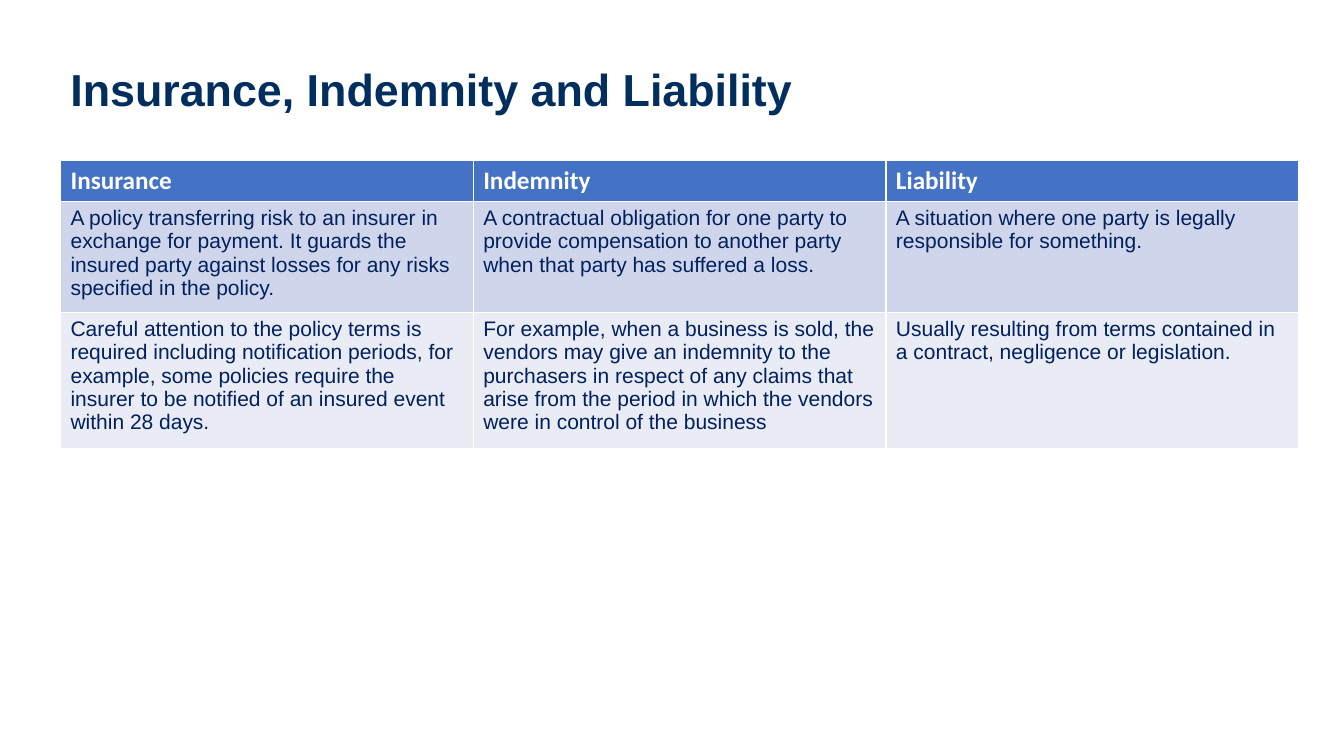
import pptx
import pptx.dml.color
import pptx.enum.text
import pptx.util
from pptx.util import Inches

COLORS = {
    "title": "002E5F",
    "head": "4472C4",
    "white": "FFFFFF",
    "body": "002060",
    "dark": "CFD5EA",
    "light": "E9EBF5",
}

ROWS = [
    ["Insurance", "Indemnity", "Liability"],
    [
        "A policy transferring risk to an insurer in exchange for payment. It guards the insured party against losses for any risks specified in the policy.",
        "A contractual obligation for one party to provide compensation to another party when that party has suffered a loss.",
        "A situation where one party is legally responsible for something.",
    ],
    [
        "Careful attention to the policy terms is required including notification periods, for example, some policies require the insurer to be notified of an insured event within 28 days.",
        "For example, when a business is sold, the vendors may give an indemnity to the purchasers in respect of any claims that arise from the period in which the vendors were in control of the business",
        "Usually resulting from terms contained in a contract, negligence or legislation.",
    ],
]


def color(name):
    """Return the named colour."""
    return pptx.dml.color.RGBColor.from_string(COLORS[name])


def style(para, face, size, tint, bold):
    """Set the font of a paragraph."""
    font = para.font
    font.name, font.size, font.bold = face, pptx.util.Pt(size), bold
    font.color.rgb = color(tint)


def add_title(slide, text):
    """Add the slide heading."""
    box = slide.shapes.add_textbox(Inches(0.6), Inches(0.4), Inches(12.13), Inches(1.03))
    frame = box.text_frame
    frame.word_wrap = True
    frame.vertical_anchor = pptx.enum.text.MSO_ANCHOR.MIDDLE
    para = frame.paragraphs[0]
    para.text = text
    para.line_spacing = 0.9
    style(para, "Arial", 32, "title", True)


def add_grid(slide, rows):
    """Add the table of terms with a header row."""
    shape = slide.shapes.add_table(
        len(rows), len(rows[0]), Inches(0.6), Inches(1.59), Inches(12.28), Inches(1.23)
    )
    table = shape.table
    fills = ["head", "dark", "light"]
    for r, texts in enumerate(rows):
        table.rows[r].height = Inches(0.41)
        for c, text in enumerate(texts):
            cell = table.cell(r, c)
            cell.text = text
            cell.fill.solid()
            cell.fill.fore_color.rgb = color(fills[r])
            para = cell.text_frame.paragraphs[0]
            if r == 0:
                style(para, "Calibri", 18, "white", True)
            else:
                style(para, "Arial", 15, "body", False)


def main():
    """Build and save the slide."""
    deck = pptx.Presentation()
    deck.slide_width, deck.slide_height = Inches(13.33), Inches(7.5)
    slide = deck.slides.add_slide(deck.slide_layouts[6])
    add_title(slide, "Insurance, Indemnity and Liability")
    add_grid(slide, ROWS)
    deck.save("out.pptx")


if __name__ == "__main__":
    main()
